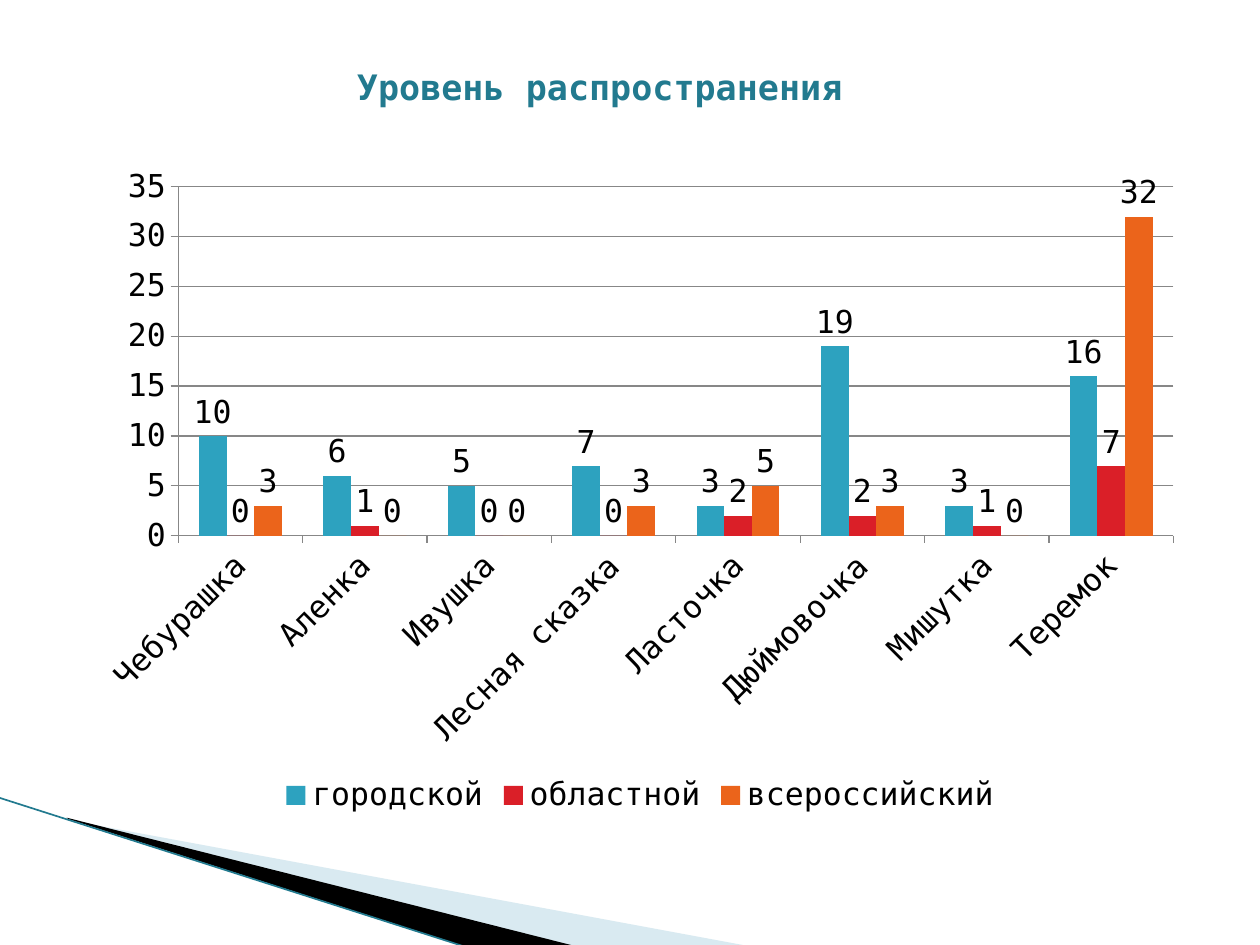
import pptx
import pptx.util
import pptx.chart.data
import pptx.dml.color
import pptx.enum.chart
import pptx.enum.shapes
import pptx.enum.text
import pptx.oxml.ns
import lxml.etree

Inches, Pt = pptx.util.Inches, pptx.util.Pt
qn = pptx.oxml.ns.qn
FONT = "DejaVu Sans Mono"


def color(hex_code):
    return pptx.dml.color.RGBColor.from_string(hex_code)


def add_text(s, text, left, top, width, height, size=18, hex_code="000000", bold=False):
    sp = s.shapes.add_textbox(Inches(left), Inches(top), Inches(width), Inches(height))
    tf = sp.text_frame
    tf.word_wrap = True
    tf.auto_size = pptx.enum.text.MSO_AUTO_SIZE.SHAPE_TO_FIT_TEXT
    p = tf.paragraphs[0]
    p.alignment = pptx.enum.text.PP_ALIGN.CENTER
    r = p.add_run()
    r.text = text
    r.font.name, r.font.size, r.font.bold = FONT, Pt(size), bold
    r.font.color.rgb = color(hex_code)
    return sp


prs = pptx.Presentation()
prs.slide_width, prs.slide_height = Inches(10), Inches(7.5)
s = prs.slides.add_slide(prs.slide_layouts[6])

# Corner wedges: points, fill, opacity in percent
wedges = [
    ([(0.55, 6.51), (5.95, 7.51), (4.56, 7.51), (0.55, 6.5)], "A0CBDC", 40),
    ([(0.53, 6.49), (4.57, 7.51), (3.72, 7.52), (0.54, 6.5)], "000000", 100),
]
for points, fill, opacity in wedges:
    corners = [(Inches(x), Inches(y)) for x, y in points]
    builder = s.shapes.build_freeform(*corners[0])
    builder.add_line_segments(corners[1:], close=True)
    sp = builder.convert_to_shape()
    sp.shadow.inherit = False
    sp.fill.solid()
    sp.fill.fore_color.rgb = color(fill)
    sp.line.fill.background()
    if opacity < 100:
        clr = sp.fill._xPr.find(".//" + qn("a:srgbClr"))
        lxml.etree.SubElement(clr, qn("a:alpha")).set("val", str(opacity * 1000))

# Edge line of the wedges
line = s.shapes.add_connector(
    pptx.enum.shapes.MSO_CONNECTOR.STRAIGHT,
    Inches(-0.01), Inches(6.33), Inches(3.71), Inches(7.52))
line.line.color.rgb = color("227A8F")
line.line.width = Pt(0.95)
lxml.etree.SubElement(line._element.spPr, qn("a:effectLst"))

# Chart data
data = pptx.chart.data.CategoryChartData()
data.categories = ["Чебурашка", "Аленка", "Ивушка", "Лесная сказка",
                   "Ласточка", "Дюймовочка", "Мишутка", "Теремок"]
series = [
    ("городской", [10, 6, 5, 7, 3, 19, 3, 16], "2DA2BF"),
    ("областной", [0, 1, 0, 0, 2, 2, 1, 7], "DA1F28"),
    ("всероссийский", [3, 0, 0, 3, 5, 3, 0, 32], "EB641B"),
]
for name, values, fill in series:
    data.add_series(name, values)

chart = s.shapes.add_chart(
    pptx.enum.chart.XL_CHART_TYPE.COLUMN_CLUSTERED,
    Inches(0.67), Inches(1.23), Inches(8.82), Inches(5.28), data).chart
chart.has_title = False
chart.font.name, chart.font.size = FONT, Pt(18)
chart.font.color.rgb = color("000000")
chart.has_legend = True
chart.legend.position = pptx.enum.chart.XL_LEGEND_POSITION.BOTTOM
chart.legend.include_in_layout = False

# Columns and value labels
plot = chart.plots[0]
plot.gap_width, plot.overlap = 150, 0
plot.vary_by_categories = False
for ser, (name, values, fill) in zip(plot.series, series):
    ser.format.fill.solid()
    ser.format.fill.fore_color.rgb = color(fill)
    ser.invert_if_negative = False
    ser.data_labels.show_value = True
    ser.data_labels.position = pptx.enum.chart.XL_LABEL_POSITION.OUTSIDE_END

# Axes
value_axis, category_axis = chart.value_axis, chart.category_axis
value_axis.minimum_scale, value_axis.maximum_scale = 0, 35
value_axis.major_unit = 5
value_axis.has_major_gridlines = True
category_axis.tick_labels.font.size = Pt(18)
category_axis._element.find(qn("c:txPr")).find(qn("a:bodyPr")).set("rot", "-2700000")
for axis in (value_axis, category_axis):
    axis.major_tick_mark = pptx.enum.chart.XL_TICK_MARK.OUTSIDE
    axis.format.line.color.rgb = color("878787")
value_axis.major_gridlines.format.line.color.rgb = color("878787")

# Title
add_text(s, "Уровень распространения", 2.24, 0.47, 5.04, 0.44,
         size=20, hex_code="227A8F", bold=True)

prs.save("out.pptx")
